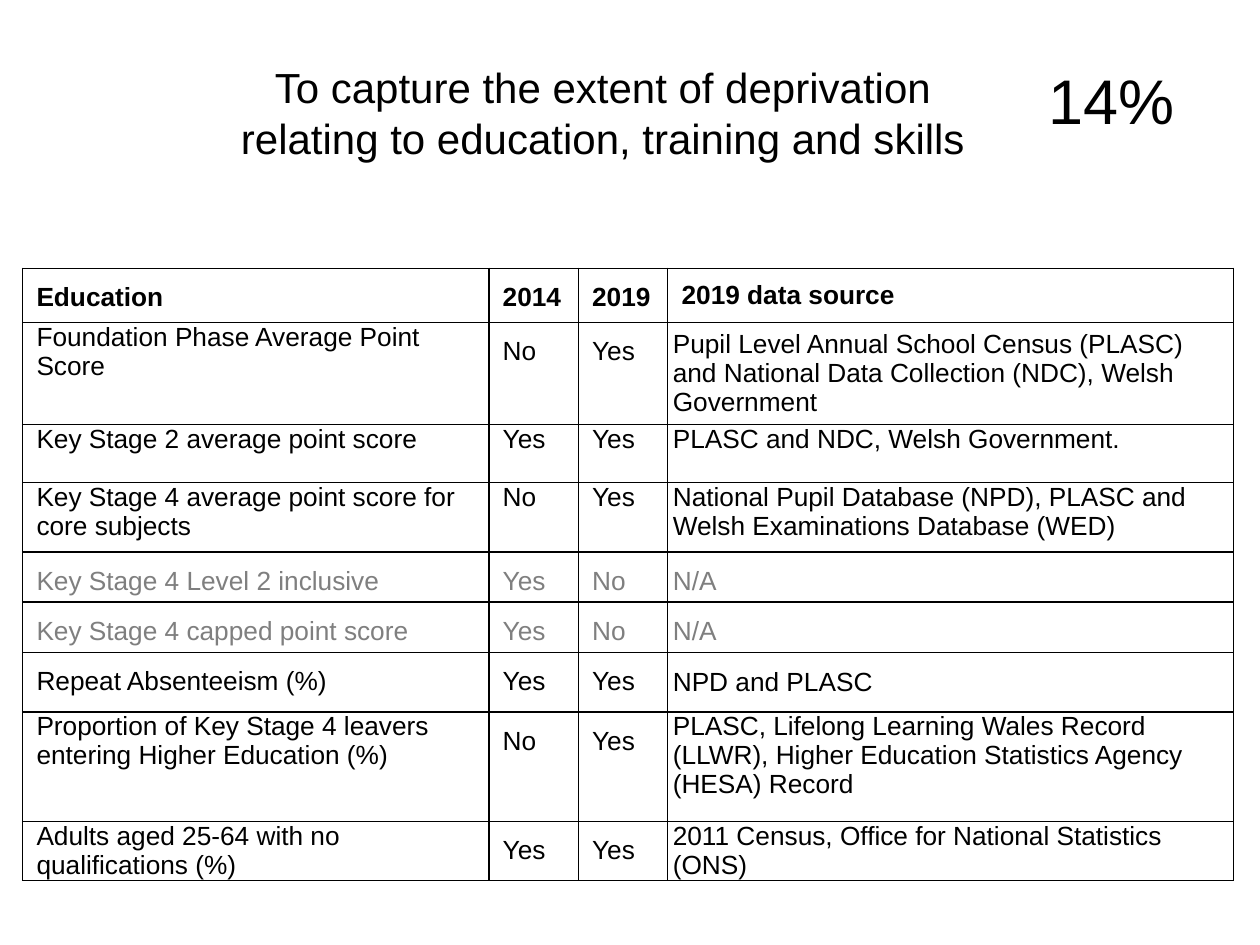
import lxml.etree
import pptx
import pptx.dml.color
import pptx.enum.text
import pptx.oxml.ns
import pptx.util

Inches = pptx.util.Inches
ALIGN = pptx.enum.text.PP_ALIGN
ANCHOR = pptx.enum.text.MSO_ANCHOR
COLORS = {"text": "000000", "dropped": "7F7F7F", "border": "000000"}

COLUMN_WIDTHS = [3.7, 0.71, 0.71, 4.49]
SIDE_INSET = 0.07
INDENT = 0.04

# Height, columns with wide line spacing, anchor of the source cell, texts
ROWS = [
    (0.43, (0, 1, 2), ANCHOR.MIDDLE,
     ["Education", "2014", "2019", "2019 data source"]),
    (0.81, (1, 2), ANCHOR.MIDDLE,
     ["Foundation Phase Average Point Score", "No", "Yes",
      "Pupil Level Annual School Census (PLASC) and National Data "
      "Collection (NDC), Welsh Government"]),
    (0.46, (), ANCHOR.TOP,
     ["Key Stage 2 average point score", "Yes", "Yes",
      "PLASC and NDC, Welsh Government."]),
    (0.55, (), ANCHOR.TOP,
     ["Key Stage 4 average point score for core subjects", "No", "Yes",
      "National Pupil Database (NPD), PLASC and Welsh Examinations "
      "Database (WED)"]),
    (0.4, (0, 1, 2, 3), ANCHOR.TOP,
     ["Key Stage 4 Level 2 inclusive", "Yes", "No", "N/A"]),
    (0.4, (0, 1, 2, 3), ANCHOR.TOP,
     ["Key Stage 4 capped point score", "Yes", "No", "N/A"]),
    (0.47, (0, 1, 2), ANCHOR.MIDDLE,
     ["Repeat Absenteeism (%)", "Yes", "Yes", "NPD and PLASC"]),
    (0.87, (1, 2), ANCHOR.TOP,
     ["Proportion of Key Stage 4 leavers entering Higher Education (%)",
      "No", "Yes",
      "PLASC, Lifelong Learning Wales Record (LLWR), Higher Education "
      "Statistics Agency (HESA) Record"]),
    (0.47, (1, 2), ANCHOR.MIDDLE,
     ["Adults aged 25-64 with no qualifications (%)", "Yes", "Yes",
      "2011 Census, Office for National Statistics (ONS)"]),
]


def set_all(target, values):
    for name, value in values.items():
        setattr(target, name, value)


class Painter:
    """Holds the text style and the current page."""

    font = "Arial"

    def __init__(self, page):
        self.page = page

    def fill_text(self, frame, text, size, color="text", bold=False, **layout):
        para = frame.paragraphs[0]
        set_all(para, layout)
        span = para.add_run()
        span.text = text
        set_all(span.font, {"name": self.font, "size": pptx.util.Pt(size),
                            "bold": bold})
        span.font.color.rgb = pptx.dml.color.RGBColor.from_string(COLORS[color])
        return para

    def place(self, box, left, top, width, height):
        set_all(box, {"left": Inches(left), "top": Inches(top),
                      "width": Inches(width), "height": Inches(height)})
        set_all(box.text_frame, {"word_wrap": True,
                                 "vertical_anchor": ANCHOR.TOP,
                                 "auto_size": pptx.enum.text.MSO_AUTO_SIZE.NONE})

    def title(self, text, size, *area):
        box = self.page.shapes.title
        self.place(box, *area)
        self.fill_text(box.text_frame, text, size, alignment=ALIGN.CENTER)

    def label(self, text, size, *area):
        box = self.page.shapes.add_textbox(0, 0, 0, 0)
        self.place(box, *area)
        self.fill_text(box.text_frame, text, size)

    def border(self, cell):
        properties = cell._tc.get_or_add_tcPr()
        qn = pptx.oxml.ns.qn
        for index, side in enumerate(("lnL", "lnR", "lnT", "lnB")):
            line = lxml.etree.Element(qn("a:" + side), w=str(pptx.util.Pt(1)))
            fill = lxml.etree.SubElement(line, qn("a:solidFill"))
            lxml.etree.SubElement(fill, qn("a:srgbClr"), val=COLORS["border"])
            properties.insert(index, line)

    def cell(self, cell, text, inset, anchor, **style):
        set_all(cell, {"margin_left": Inches(inset), "margin_right": Inches(inset),
                       "margin_top": 0, "margin_bottom": 0,
                       "vertical_anchor": anchor})
        cell.fill.background()
        self.border(cell)
        para = self.fill_text(cell.text_frame, text, 15, **style)
        para._p.get_or_add_pPr().set("marL", str(Inches(INDENT)))

    def table(self, rows, widths, left, top):
        total_height = sum(row[0] for row in rows)
        table = self.page.shapes.add_table(
            len(rows), len(widths), Inches(left), Inches(top),
            Inches(sum(widths)), Inches(total_height)).table
        table.horz_banding = False
        for column, width in zip(table.columns, widths):
            column.width = Inches(width)
        source_column = len(widths) - 1
        for r, (height, spaced, source_anchor, texts) in enumerate(rows):
            table.rows[r].height = Inches(height)
            header = r == 0
            for c, text in enumerate(texts):
                is_source = c == source_column
                self.cell(
                    table.cell(r, c), text,
                    inset=0 if is_source and not header else SIDE_INSET,
                    anchor=source_anchor if is_source else ANCHOR.TOP,
                    color="dropped" if texts[-1] == "N/A" else "text",
                    bold=header,
                    line_spacing=1.5 if c in spaced else 1.0)


def main():
    deck = pptx.Presentation()
    set_all(deck, {"slide_width": Inches(10), "slide_height": Inches(7.5)})
    title_only = deck.slide_layouts[5]
    painter = Painter(deck.slides.add_slide(title_only))
    painter.title("To capture the extent of deprivation relating to education, "
                  "training and skills", 24, 1.71, 0.44, 6.15, 0.91)
    painter.table(ROWS, COLUMN_WIDTHS, 0.18, 2.13)
    painter.label("14%", 36, 8.22, 0.44, 1.33, 0.71)
    deck.save("out.pptx")


if __name__ == "__main__":
    main()
